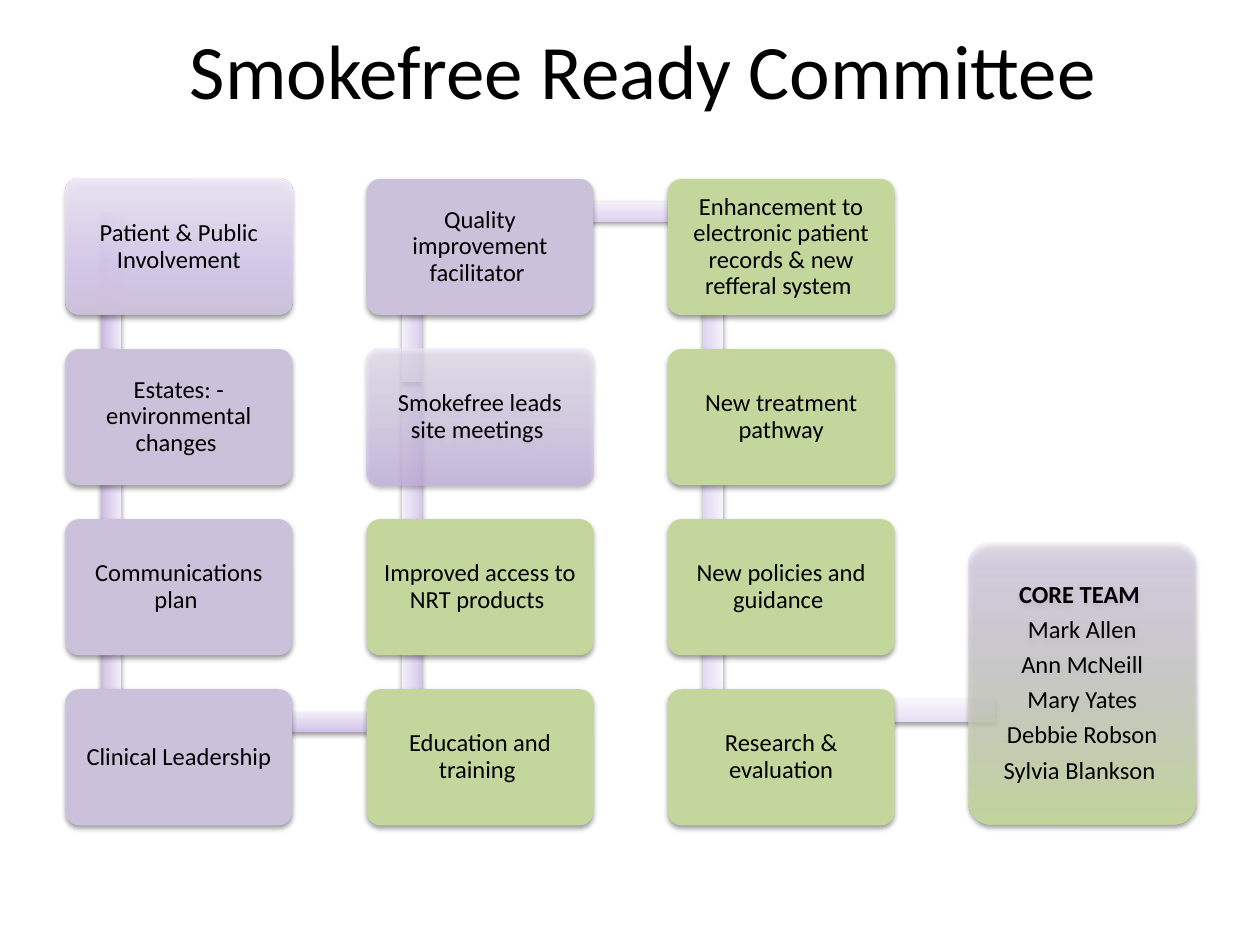
import pptx
import pptx.util
import pptx.dml.color
import pptx.enum.shapes
import pptx.enum.text
import pptx.oxml
import pptx.oxml.ns

Inches, Pt = pptx.util.Inches, pptx.util.Pt
RGB = pptx.dml.color.RGBColor
SHAPES = pptx.enum.shapes.MSO_SHAPE
qn = pptx.oxml.ns.qn

# Content: cards in the order the chain runs, with their fill style
TITLE = "Smokefree Ready Committee "
CARDS = [
    ("Patient & Public Involvement", "public"),
    ("Estates: - environmental changes ", "lilac"),
    ("Communications plan ", "lilac"),
    ("Clinical Leadership", "lilac"),
    ("Education and training ", "green"),
    ("Improved access to NRT products ", "green"),
    ("Smokefree leads site meetings ", "leads"),
    ("Quality improvement facilitator ", "lilac"),
    ("Enhancement to electronic patient records & new refferal system ", "green"),
    ("New treatment pathway", "green"),
    ("New policies and guidance ", "green"),
    ("Research & evaluation", "green"),
]
CORE_TEAM = ["CORE TEAM ", "Mark Allen", "Ann McNeill", "Mary Yates",
             "Debbie Robson", "Sylvia Blankson "]

# A fill is one colour, or gradient stops of (position %, colour, opacity %)
THEME = {
    "font": "Calibri", "text": "000000", "title_size": 44, "card_size": 14,
    "lilac": "CCC1DA",
    "green": "C3D69B",
    "public": [(0, "CCC1DA", 100), (35, "D8CBEE", 90), (100, "F0EAF9", 90)],
    "leads": [(0, "C9B5E8", 70), (35, "D8CBEE", 70), (100, "F0EAF9", 70)],
    "core": [(0, "C3D69B", 100), (92, "D8CBEE", 50), (100, "F0EAF9", 50)],
    # Links fade from the first colour to the last along the chain
    "link": [(0, "C8B5E4", "E6DEF4"), (35, "D8CBEB", "EDE7F7"), (100, "F0EBF8", "F8F5FC")],
}
CARD_FRAME = {
    "word_wrap": True, "vertical_anchor": pptx.enum.text.MSO_ANCHOR.MIDDLE,
    "margin_left": Inches(0.06), "margin_right": Inches(0.06),
    "margin_top": Inches(0.06), "margin_bottom": Inches(0.06),
}
CENTRED = {"alignment": pptx.enum.text.PP_ALIGN.CENTER}
CARD_PARAGRAPH = {**CENTRED, "line_spacing": 0.9, "space_after": Pt(4.9)}

# Grid
ROWS = 4
LEFT, TOP, CARD_W, CARD_H = 0.52, 1.42, 1.8, 1.08
COLUMN_STEP, ROW_STEP = 2.39, 1.35
LINK_THICK, LINK_INSET = 0.16, 0.36
CORE_BOX = (7.69, 4.31, 1.8, 2.23)
LAST_LINK = (5.73, 5.55, 2.17, 0.18)


def apply(target, values):
    for name, value in values.items():
        setattr(target, name, value)


def blend(start, end, share):
    pairs = zip(bytes.fromhex(start), bytes.fromhex(end))
    return "".join(f"{round(a + (b - a) * share):02X}" for a, b in pairs)


def add_xml(parent, xml):
    parent.append(pptx.oxml.parse_xml(xml.replace(">", f" {pptx.oxml.ns.nsdecls('a')}>", 1)))


def colour_xml(colour, opacity):
    return f'<a:srgbClr val="{colour}"><a:alpha val="{opacity * 1000}"/></a:srgbClr>'


def add_block(kind, box, fill):
    block = slide.shapes.add_shape(kind, *map(Inches, box))
    block.line.fill.background()
    if isinstance(fill, str):
        block.fill.solid()
        block.fill.fore_color.rgb = RGB.from_string(fill)
    else:
        block.fill.gradient()
        block.fill.gradient_angle = 90
        stops = block._element.spPr.find(".//" + qn("a:gsLst"))
        for stop in list(stops):
            stops.remove(stop)
        for position, colour, opacity in fill:
            add_xml(stops, f'<a:gs pos="{position * 1000}">{colour_xml(colour, opacity)}</a:gs>')
    block.shadow.inherit = False
    add_xml(block._element.spPr.find(qn("a:effectLst")),
            f'<a:outerShdw blurRad="{Pt(3.1)}" dist="{Pt(1.6)}" dir="5400000" '
            f'rotWithShape="0">{colour_xml("000000", 38)}</a:outerShdw>')
    return block


def write(frame, lines, size, paragraph_format, bold_first=False):
    for index, line in enumerate(lines):
        paragraph = frame.paragraphs[0] if index == 0 else frame.add_paragraph()
        apply(paragraph, paragraph_format)
        run = paragraph.add_run()
        run.text = line
        apply(run.font, {"name": THEME["font"], "size": Pt(size),
                         "bold": bold_first and index == 0})
        run.font.color.rgb = RGB.from_string(THEME["text"])


def add_card(box, lines, fill, bold_first=False):
    card = add_block(SHAPES.ROUNDED_RECTANGLE, box, fill)
    card.adjustments[0] = 0.1
    apply(card.text_frame, CARD_FRAME)
    write(card.text_frame, lines, THEME["card_size"], CARD_PARAGRAPH, bold_first)


def card_place(index):
    """The chain runs down the even columns and up the odd ones."""
    column, step = divmod(index, ROWS)
    row = ROWS - 1 - step if column % 2 else step
    return column, LEFT + column * COLUMN_STEP, TOP + row * ROW_STEP


def add_link(index):
    column, x, y = card_place(index)
    rotation = 0
    if index == len(CARDS) - 1:
        box = LAST_LINK
    elif index % ROWS == ROWS - 1:
        box = (x + LINK_INSET, y + 0.18, COLUMN_STEP, LINK_THICK)
    else:
        upper = min(y, card_place(index + 1)[2])
        middle = upper + 0.94
        box = (x + LINK_INSET - ROW_STEP / 2, middle - LINK_THICK / 2, ROW_STEP, LINK_THICK)
        rotation = 270 if column % 2 else 90
    share = index / (len(CARDS) - 1)
    fill = [(position, blend(start, end, share), 100) for position, start, end in THEME["link"]]
    add_block(SHAPES.RECTANGLE, box, fill).rotation = rotation


deck = pptx.Presentation()
deck.slide_width, deck.slide_height = Inches(10), Inches(7.5)
slide = deck.slides.add_slide(deck.slide_layouts[6])

# Chain of cards, each over the link that leaves it
for index, (label, style) in enumerate(CARDS):
    add_link(index)
    _, x, y = card_place(index)
    add_card((x, y, CARD_W, CARD_H), [label], THEME[style])

# Core team
add_card(CORE_BOX, CORE_TEAM, THEME["core"], bold_first=True)

# Title
heading = slide.shapes.add_textbox(*map(Inches, (0.35, 0.13, 9.65, 0.84))).text_frame
heading.word_wrap = True
write(heading, [TITLE], THEME["title_size"], CENTRED)

deck.save("out.pptx")
